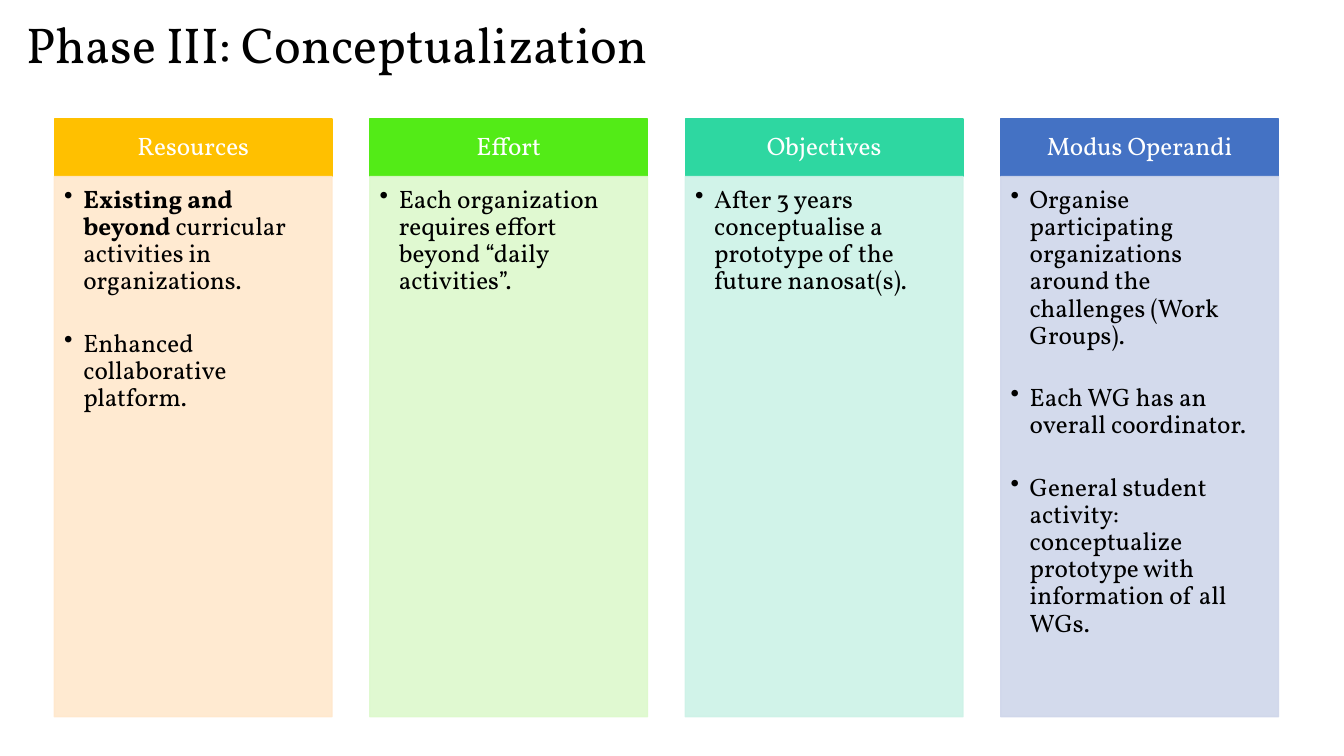
"""Build the Phase III conceptualization slide with four topic columns."""
from dataclasses import dataclass

from lxml import etree
from pptx import Presentation
from pptx.dml.color import RGBColor
from pptx.enum.shapes import MSO_SHAPE
from pptx.enum.text import MSO_ANCHOR, MSO_AUTO_SIZE, PP_ALIGN
from pptx.oxml.ns import qn
from pptx.shapes.autoshape import Shape
from pptx.slide import Slide
from pptx.text.text import _Paragraph
from pptx.util import Cm, Pt

RECTANGLE = MSO_SHAPE.RECTANGLE
TOP, MIDDLE = MSO_ANCHOR.TOP, MSO_ANCHOR.MIDDLE
LEFT, CENTER = PP_ALIGN.LEFT, PP_ALIGN.CENTER
FIT_SHAPE = MSO_AUTO_SIZE.SHAPE_TO_FIT_TEXT


@dataclass(frozen=True)
class Theme:
    """Fonts, type sizes and shared colours."""
    font: str = "Vollkorn"
    title_size: int = 36
    text_size: int = 18
    dark: str = "000000"
    light: str = "FFFFFF"
    body_opacity: int = 90


@dataclass(frozen=True)
class TextPart:
    """A stretch of text with one weight."""
    text: str
    bold: bool = False


@dataclass(frozen=True)
class Column:
    """A headed column of bullet points."""
    heading: str
    header_color: str
    body_color: str
    bullets: tuple[tuple[TextPart, ...], ...]


@dataclass(frozen=True)
class Box:
    """Placement in centimetres."""
    left: float
    top: float
    width: float
    height: float


THEME = Theme()
TITLE = "Phase III: Conceptualization"
TITLE_BOX = Box(0.41, 0.2, 16.51, 1.8)
COLUMN_LEFT, COLUMN_STEP, COLUMN_WIDTH = 1.37, 7.95, 7.0
HEADER_TOP, HEADER_HEIGHT, BODY_HEIGHT = 3.0, 1.45, 13.61
HEADER_INSETS = (0.36, 0.2, 0.36, 0.2)
BODY_INSETS = (0.25, 0.25, 0.36, 0.41)
BULLET_INDENT = 0.48
BULLET_GAP = 25

COLUMNS = (
    Column("Resources", "FFC000", "FFE8CC", (
        (TextPart("Existing and beyond ", bold=True),
         TextPart("curricular activities in organizations.")),
        (TextPart("Enhanced collaborative platform."),),
    )),
    Column("Effort", "53EB17", "DDF9CC", (
        (TextPart("Each organization requires effort beyond “daily activities”."),),
    )),
    Column("Objectives", "2ED7A1", "CDF2E7", (
        (TextPart("After 3 years conceptualise a prototype of the future nanosat(s)."),),
    )),
    Column("Modus Operandi", "4472C4", "CFD6EA", (
        (TextPart("Organise participating organizations around the challenges (Work Groups)."),),
        (TextPart("Each WG has an overall coordinator."),),
        (TextPart("General student activity: conceptualize prototype with information of all WGs."),),
    )),
)


def add_part(paragraph: _Paragraph, part: TextPart, size: int, color: str) -> None:
    """Append one formatted run to a paragraph."""
    run = paragraph.add_run()
    run.text = part.text
    run.font.name = THEME.font
    run.font.size = Pt(size)
    run.font.bold = part.bold
    run.font.color.rgb = RGBColor.from_string(color)


def add_panel(slide: Slide, box: Box, color: str, insets: tuple[float, ...],
              anchor: MSO_ANCHOR) -> Shape:
    """Draw a filled rectangle ready for text."""
    shape = slide.shapes.add_shape(
        RECTANGLE, Cm(box.left), Cm(box.top), Cm(box.width), Cm(box.height))
    shape.shadow.inherit = False
    shape.fill.solid()
    shape.fill.fore_color.rgb = RGBColor.from_string(color)
    shape.line.color.rgb = RGBColor.from_string(color)
    shape.line.width = Pt(1)
    frame = shape.text_frame
    frame.word_wrap = True
    frame.vertical_anchor = anchor
    frame.margin_left, frame.margin_top, frame.margin_right, frame.margin_bottom = map(Cm, insets)
    return shape


def set_opacity(shape: Shape, percent: int) -> None:
    """Make the fill and outline of a shape partly transparent."""
    for color in shape.element.spPr.iter(qn("a:srgbClr")):
        etree.SubElement(color, qn("a:alpha"), val=str(percent * 1000))


def set_bullet(paragraph: _Paragraph) -> None:
    """Give a paragraph a round bullet with a hanging indent."""
    properties = paragraph._p.get_or_add_pPr()
    properties.set("marL", str(Cm(BULLET_INDENT)))
    properties.set("indent", str(-Cm(BULLET_INDENT)))
    etree.SubElement(properties, qn("a:buChar"), char="•")


def add_title(slide: Slide) -> None:
    """Write the slide title."""
    title = slide.shapes.add_textbox(
        Cm(TITLE_BOX.left), Cm(TITLE_BOX.top), Cm(TITLE_BOX.width), Cm(TITLE_BOX.height))
    title.text_frame.word_wrap = False
    title.text_frame.auto_size = FIT_SHAPE
    add_part(title.text_frame.paragraphs[0], TextPart(TITLE), THEME.title_size, THEME.dark)


def add_column(slide: Slide, column: Column, left: float) -> None:
    """Draw the header and the bulleted body of one column."""
    header_box = Box(left, HEADER_TOP, COLUMN_WIDTH, HEADER_HEIGHT)
    header = add_panel(slide, header_box, column.header_color, HEADER_INSETS, MIDDLE)
    heading = header.text_frame.paragraphs[0]
    heading.alignment = CENTER
    heading.line_spacing = 0.9
    add_part(heading, TextPart(column.heading), THEME.text_size, THEME.light)

    body_box = Box(left, HEADER_TOP + HEADER_HEIGHT, COLUMN_WIDTH, BODY_HEIGHT)
    body = add_panel(slide, body_box, column.body_color, BODY_INSETS, TOP)
    set_opacity(body, THEME.body_opacity)
    frame = body.text_frame
    for index, bullet in enumerate(column.bullets):
        paragraph = frame.add_paragraph() if index else frame.paragraphs[0]
        paragraph.alignment = LEFT
        paragraph.line_spacing = 0.9
        paragraph.space_after = Pt(BULLET_GAP)
        set_bullet(paragraph)
        for part in bullet:
            add_part(paragraph, part, THEME.text_size, THEME.dark)


def main() -> None:
    """Create and save the presentation."""
    presentation = Presentation()
    presentation.slide_width, presentation.slide_height = Cm(33.87), Cm(19.05)
    slide = presentation.slides.add_slide(presentation.slide_layouts[6])
    add_title(slide)
    for index, column in enumerate(COLUMNS):
        add_column(slide, column, COLUMN_LEFT + index * COLUMN_STEP)
    presentation.save("out.pptx")


if __name__ == "__main__":
    main()
